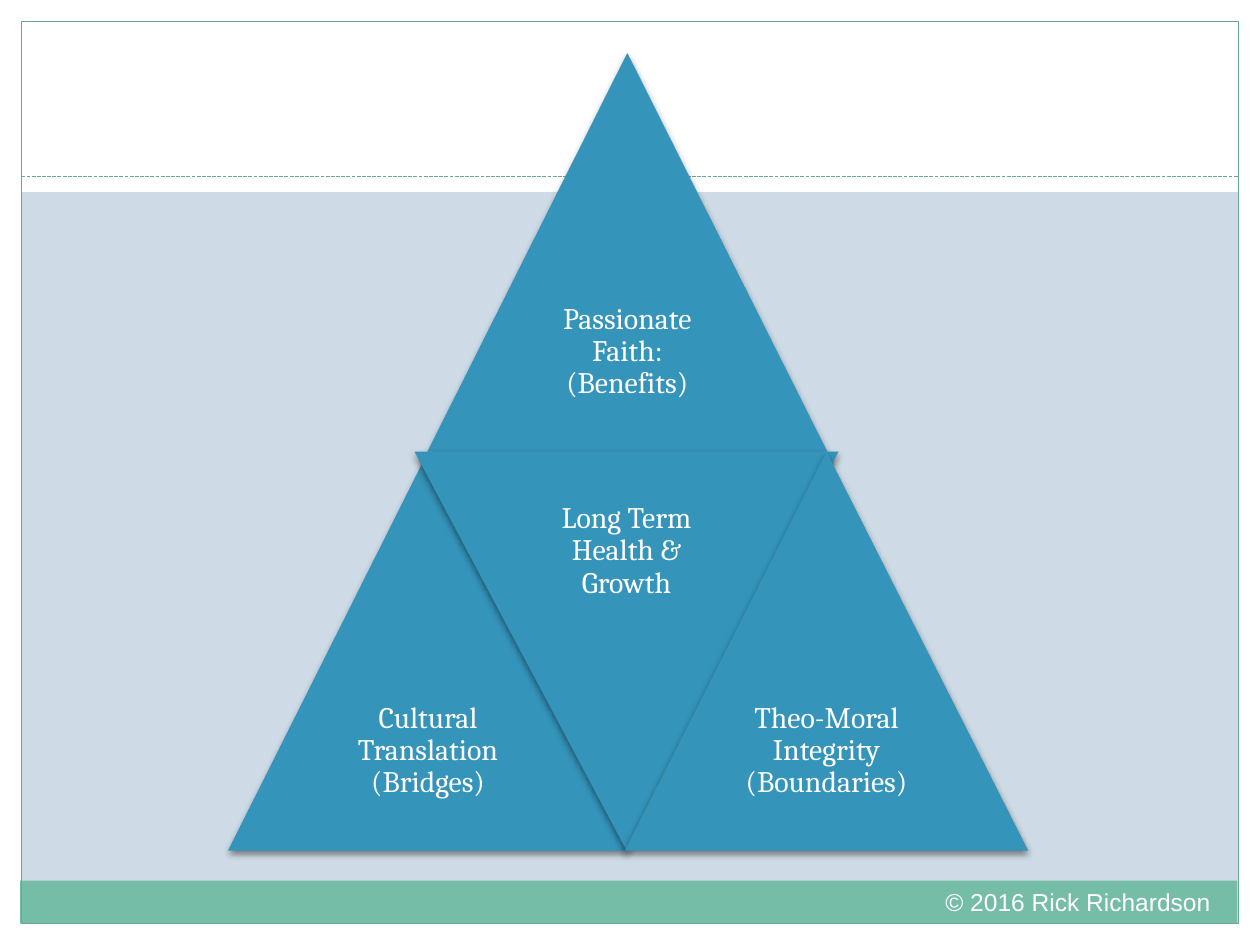
import dataclasses

import lxml.etree
import pptx
import pptx.dml.color
import pptx.enum.dml
import pptx.enum.shapes
import pptx.enum.text
import pptx.oxml
import pptx.oxml.ns
import pptx.util

COLORS = {
    "background": "CEDBE6",
    "white": "FFFFFF",
    "footer": "75BDA7",
    "frame": "67A793",
    "triangle": "3494BA",
    "shadow": "000000",
}
SHAPES = pptx.enum.shapes.MSO_SHAPE
ALIGN = pptx.enum.text.PP_ALIGN


@dataclasses.dataclass
class Box:
    left: float
    top: float
    width: float
    height: float

    def share(self, left, top, width, height):
        return Box(
            self.left + left * self.width,
            self.top + top * self.height,
            width * self.width,
            height * self.height,
        )

    def lengths(self):
        return [pptx.util.Inches(value) for value in dataclasses.astuple(self)]


def color(name):
    return pptx.dml.color.RGBColor.from_string(COLORS[name])


def add_shape(slide, kind, box, fill=None, line=None):
    shape = slide.shapes.add_shape(kind, *box.lengths())
    shape.shadow.inherit = False
    if fill:
        shape.fill.solid()
        shape.fill.fore_color.rgb = color(fill)
    else:
        shape.fill.background()
    if line:
        shape.line.color.rgb = color(line)
        shape.line.width = pptx.util.Pt(0.75)
    else:
        shape.line.fill.background()
    return shape


def add_text(slide, box, text, font, size, alignment, inset, spacing=1.0):
    frame = slide.shapes.add_textbox(*box.lengths()).text_frame
    frame.word_wrap = True
    frame.vertical_anchor = pptx.enum.text.MSO_ANCHOR.MIDDLE
    frame.margin_left = frame.margin_right = pptx.util.Inches(inset)
    frame.margin_top = frame.margin_bottom = pptx.util.Inches(inset / 2)
    paragraph = frame.paragraphs[0]
    paragraph.text = text
    paragraph.alignment = alignment
    paragraph.line_spacing = spacing
    paragraph.font.name = font
    paragraph.font.size = pptx.util.Pt(size)
    paragraph.font.color.rgb = color("white")


def add_shadow(shape):
    effects = shape._element.spPr.find(pptx.oxml.ns.qn("a:effectLst"))
    effects.append(pptx.oxml.parse_xml(
        f'<a:outerShdw {pptx.oxml.ns.nsdecls("a")} blurRad="50800" dist="25400" '
        'dir="5400000" rotWithShape="0">'
        f'<a:srgbClr val="{COLORS["shadow"]}"><a:alpha val="45000"/></a:srgbClr>'
        '</a:outerShdw>'
    ))


def add_backdrop(slide, box):
    slide.background.fill.solid()
    slide.background.fill.fore_color.rgb = color("background")
    margin_x, margin_y = 0.17 / box.width, 0.17 / box.height
    bands = [
        (0, 1 - margin_y, 1, margin_y),
        (0, 0, 1, 0.203),
        (0, 0, margin_x, 1),
        (1 - margin_x, 0, margin_x, 1),
    ]
    for band in bands:
        add_shape(slide, SHAPES.RECTANGLE, box.share(*band), "white")


def add_footer(slide, box):
    add_shape(slide, SHAPES.RECTANGLE, box, "footer")
    add_text(slide, box.share(0.75, 0, 0.247, 1), "© 2016 Rick Richardson",
             "Arial", 14, ALIGN.LEFT, 0.1)


def add_frame(slide, box):
    add_shape(slide, SHAPES.RECTANGLE, box, line="frame")
    divider = box.share(0, 0.172, 1, 0)
    left, top, width, height = divider.lengths()
    connector = slide.shapes.add_connector(
        pptx.enum.shapes.MSO_CONNECTOR.STRAIGHT, left, top, left + width, top)
    connector.line.color.rgb = color("frame")
    connector.line.width = pptx.util.Pt(0.75)
    connector.line.dash_style = pptx.enum.dml.MSO_LINE.SQUARE_DOT
    lxml.etree.SubElement(connector._element.spPr, pptx.oxml.ns.qn("a:effectLst"))


def add_triangle(slide, box, text, inverted=False):
    triangle = add_shape(slide, SHAPES.ISOSCELES_TRIANGLE, box, "triangle")
    triangle.rotation = 180 if inverted else 0
    add_shadow(triangle)
    label = box.share(0.25, 0 if inverted else 0.5, 0.5, 0.5)
    add_text(slide, label, text, "Cambria", 17, ALIGN.CENTER, 0.07, 0.9)


def add_pyramid(slide, box):
    triangles = [
        (0.249, 0, 0.5, "Passionate Faith: (Benefits)", False),
        (0, 0.5, 0.5, "Cultural Translation (Bridges)", False),
        (0.233, 0.5, 0.53, "Long Term Health & Growth", True),
        (0.496, 0.5, 0.504, "Theo-Moral Integrity (Boundaries)", False),
    ]
    for left, top, width, text, inverted in triangles:
        add_triangle(slide, box.share(left, top, width, 0.5), text, inverted)


def main():
    presentation = pptx.Presentation()
    page = Box(0, 0, 10, 7.5)
    presentation.slide_width = pptx.util.Inches(page.width)
    presentation.slide_height = pptx.util.Inches(page.height)
    slide = presentation.slides.add_slide(presentation.slide_layouts[6])
    add_backdrop(slide, page)
    add_footer(slide, Box(0.16, 6.99, 9.66, 0.34))
    add_frame(slide, Box(0.17, 0.17, 9.66, 7.16))
    add_pyramid(slide, Box(1.81, 0.42, 6.35, 6.33))
    presentation.save("out.pptx")


if __name__ == "__main__":
    main()
